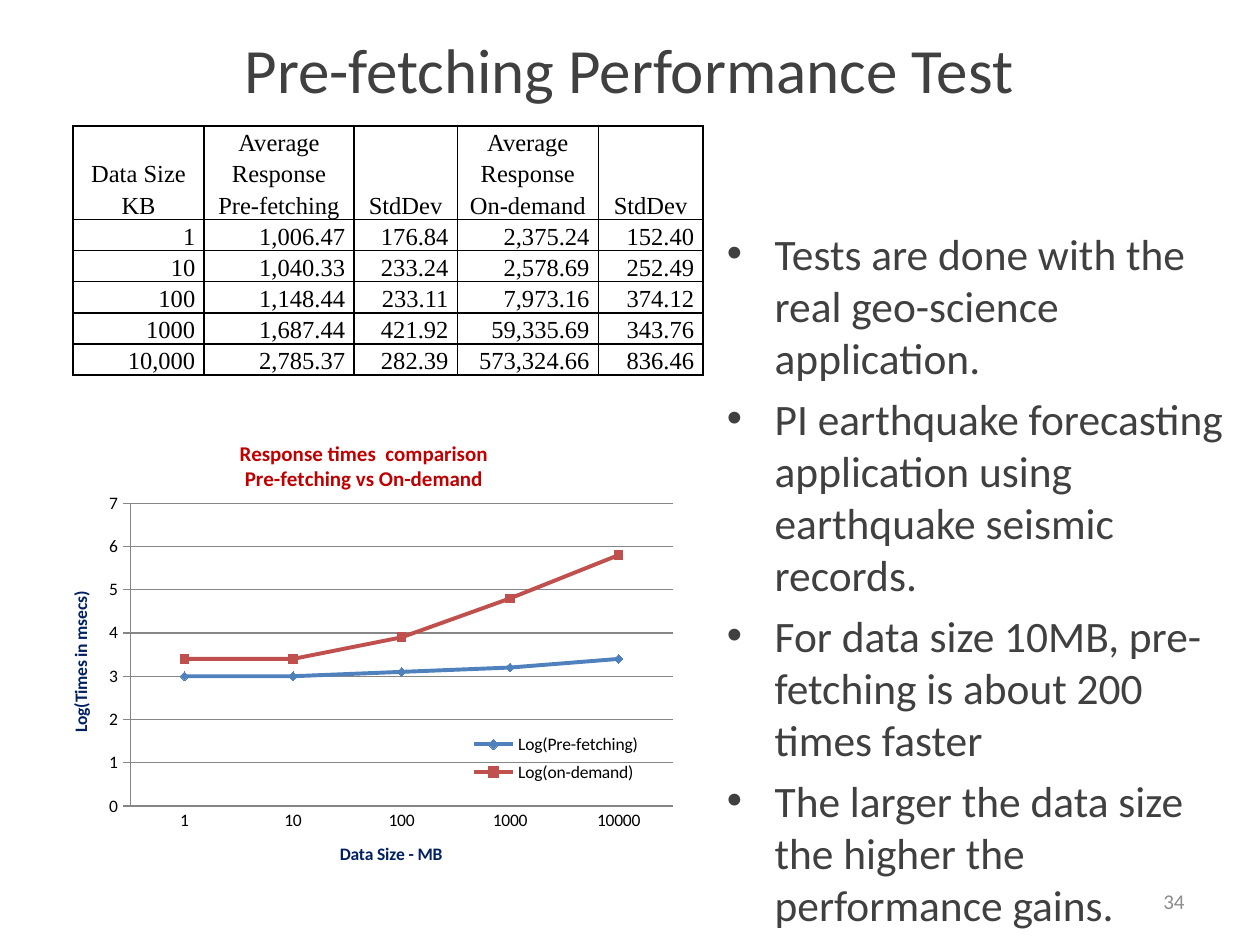
from dataclasses import dataclass
from math import log10

from pptx import Presentation
from pptx.chart.data import CategoryChartData as ChartData
from pptx.dml.color import RGBColor
from pptx.enum.chart import XL_CHART_TYPE as Kind
from pptx.enum.chart import XL_LEGEND_POSITION as Place
from pptx.enum.chart import XL_MARKER_STYLE as Mark
from pptx.enum.chart import XL_TICK_MARK as Tick
from pptx.enum.text import MSO_ANCHOR as Anchor
from pptx.enum.text import PP_ALIGN as Align
from pptx.oxml.ns import qn
from pptx.oxml.xmlchemy import OxmlElement as Element
from pptx.util import Inches, Pt

DARK, NAVY, GRID = "404040", "002060", "868686"


@dataclass
class Label:
    text: str
    box: tuple
    size: float
    color: str
    align: Align = Align.LEFT
    anchor: Anchor = Anchor.MIDDLE
    bullet: bool = False


@dataclass
class Curve:
    name: str
    column: int
    color: str
    mark: Mark


HEADS = [
    ["Data Size", "Average\nResponse", "", "Average\nResponse", ""],
    ["KB", "Pre-fetching", "StdDev", "On-demand", "StdDev"],
]
ROWS = [
    ["1", "1,006.47", "176.84", "2,375.24", "152.40"],
    ["10", "1,040.33", "233.24", "2,578.69", "252.49"],
    ["100", "1,148.44", "233.11", "7,973.16", "374.12"],
    ["1000", "1,687.44", "421.92", "59,335.69", "343.76"],
    ["10,000", "2,785.37", "282.39", "573,324.66", "836.46"],
]
WIDTHS = [1.04, 1.19, 0.82, 1.12, 0.83]
CURVES = [
    Curve("Log(Pre-fetching)", 1, "4F81BD", Mark.DIAMOND),
    Curve("Log(on-demand)", 3, "C0504D", Mark.SQUARE),
]
POINTS = [
    "Tests are done with the real geo-science application.",
    "PI earthquake forecasting application using earthquake seismic records.",
    "For data size 10MB, pre-fetching is about 200 times faster",
    "The larger the data size the higher the performance gains.",
]
LABELS = [
    Label("\n".join(POINTS), (5.67, 1.75, 4.17, 4.95), 24.8, DARK,
          anchor=Anchor.TOP, bullet=True),
    Label("Pre-fetching Performance Test", (0.33, 0.08, 9.33, 0.92), 36, DARK,
          Align.CENTER),
    Label("34", (7.17, 6.95, 2.33, 0.4), 12, "8C8C8C", Align.RIGHT),
]


def rgb(code: str) -> RGBColor:
    return RGBColor.from_string(code)


def style(font, size: float, color: str, name="Calibri", bold=False) -> None:
    font.size, font.name, font.bold = Pt(size), name, bold
    font.color.rgb = rgb(color)


def add_bullet(para, size: float) -> None:
    para.space_before = Pt(round(size * 0.2, 1))
    props = para._p.get_or_add_pPr()
    props.set("marL", str(Inches(0.38)))
    props.set("indent", str(-Inches(0.38)))
    for tag, key, value in (("a:buFont", "typeface", "Arial"),
                            ("a:buChar", "char", "•")):
        node = Element(tag)
        node.set(key, value)
        props.append(node)


def add_label(slide, item: Label) -> None:
    frame = slide.shapes.add_textbox(*map(Inches, item.box)).text_frame
    frame.word_wrap = True
    frame.vertical_anchor = item.anchor
    frame.text = item.text
    for para in frame.paragraphs:
        para.alignment = item.align
        if item.bullet:
            add_bullet(para, item.size)
        style(para.font, item.size, item.color)


def set_edges(cell, bare: str) -> None:
    """Draw black cell borders, except on the bare side."""
    props = cell._tc.get_or_add_tcPr()
    for side in "LRTB":
        line = Element(f"a:ln{side}")
        line.set("w", str(Pt(1)))
        if side == bare:
            line.append(Element("a:noFill"))
        else:
            fill, color = Element("a:solidFill"), Element("a:srgbClr")
            color.set("val", "000000")
            fill.append(color)
            line.append(fill)
        props.append(line)


def add_grid(slide) -> None:
    rows = HEADS + ROWS
    box = map(Inches, (0.58, 1, sum(WIDTHS), 0.22 * len(rows)))
    table = slide.shapes.add_table(len(rows), len(WIDTHS), *box).table
    table.first_row = table.horz_banding = False
    for col, width in zip(table.columns, WIDTHS):
        col.width = Inches(width)
    for r, row in enumerate(rows):
        for c, text in enumerate(row):
            cell = table.cell(r, c)
            set_edges(cell, {0: "B", 1: "T"}.get(r, ""))
            cell.fill.background()
            cell.vertical_anchor = Anchor.BOTTOM
            cell.margin_left = cell.margin_right = Inches(0.07)
            cell.margin_top = cell.margin_bottom = 0
            cell.text = text
            for para in cell.text_frame.paragraphs:
                para.alignment = Align.CENTER if r < len(HEADS) else Align.RIGHT
                para.line_spacing = 1.15
                style(para.font, 14, "000000", "Times New Roman")


def set_place(part, inner=False, **sides: float) -> None:
    """Give a chart part a fixed place, in fractions of the chart."""
    old = part.find(qn("c:layout"))
    if old is not None:
        part.remove(old)
    layout, manual = Element("c:layout"), Element("c:manualLayout")
    values = {"layoutTarget": "inner"} if inner else {}
    values |= {"xMode": "edge", "yMode": "edge"} | sides
    for key, value in values.items():
        node = Element(f"c:{key}")
        node.set("val", str(value))
        manual.append(node)
    layout.append(manual)
    after = part.find(qn("c:overlay"))
    if after is None:
        part.insert(0, layout)
    else:
        after.addprevious(layout)


def set_title(title, text: str, size: float, color: str) -> None:
    title.text_frame.text = text
    for para in title.text_frame.paragraphs:
        style(para.font, size, color, bold=True)


def add_plot(slide) -> None:
    data = ChartData()
    data.categories = [row[0].replace(",", "") for row in ROWS]
    for curve in CURVES:
        times = [float(row[curve.column].replace(",", "")) for row in ROWS]
        data.add_series(curve.name, [round(log10(t), 1) for t in times])
    box = map(Inches, (0.5, 3.42, 5.08, 3.61))
    chart = slide.shapes.add_chart(Kind.LINE_MARKERS, *box, data).chart
    style(chart.font, 10, "000000")
    set_title(chart.chart_title,
              "Response times  comparison\nPre-fetching vs On-demand", 12, "C00000")
    set_place(chart.chart_title._element, x=0.27, y=0.01)

    # Lines and markers
    plot = chart.plots[0]
    plot.vary_by_categories = False
    set_place(plot._element.getparent(), True, x=0.1, y=0.16, w=0.85, h=0.67)
    set_place(plot._element.getparent(), True, x=0.105, y=0.159, w=0.848, h=0.666)
    for line, curve in zip(plot.series, CURVES):
        line.smooth = False
        line.format.line.width = Pt(2.25)
        line.format.line.color.rgb = rgb(curve.color)
        line.marker.style, line.marker.size = curve.mark, 5
        line.marker.format.fill.solid()
        line.marker.format.fill.fore_color.rgb = rgb(curve.color)
        line.marker.format.line.color.rgb = rgb(curve.color)

    # Axes
    cat, val = chart.category_axis, chart.value_axis
    for axis, text, tick in ((cat, "Data Size - MB", Tick.NONE),
                             (val, "Log(Times in msecs)", Tick.CROSS)):
        set_title(axis.axis_title, text, 10, NAVY)
        axis.major_tick_mark, axis.minor_tick_mark = tick, Tick.NONE
        axis.format.line.color.rgb = rgb(GRID)
    val.axis_title.text_frame._txBody.bodyPr.set("rot", "-5400000")
    val.minimum_scale, val.maximum_scale, val.major_unit = 0, 7, 1
    val.major_gridlines.format.line.color.rgb = rgb(GRID)

    # Legend
    chart.has_legend = True
    chart.legend.position = Place.RIGHT
    chart.legend.include_in_layout = False
    set_place(chart.legend._element, x=0.63, y=0.65, w=0.28, h=0.14)


def main() -> None:
    deck = Presentation()
    deck.slide_width, deck.slide_height = Inches(10), Inches(7.5)
    slide = deck.slides.add_slide(deck.slide_layouts[6])
    add_grid(slide)
    add_plot(slide)
    for item in LABELS:
        add_label(slide, item)
    deck.save("out.pptx")


if __name__ == "__main__":
    main()
